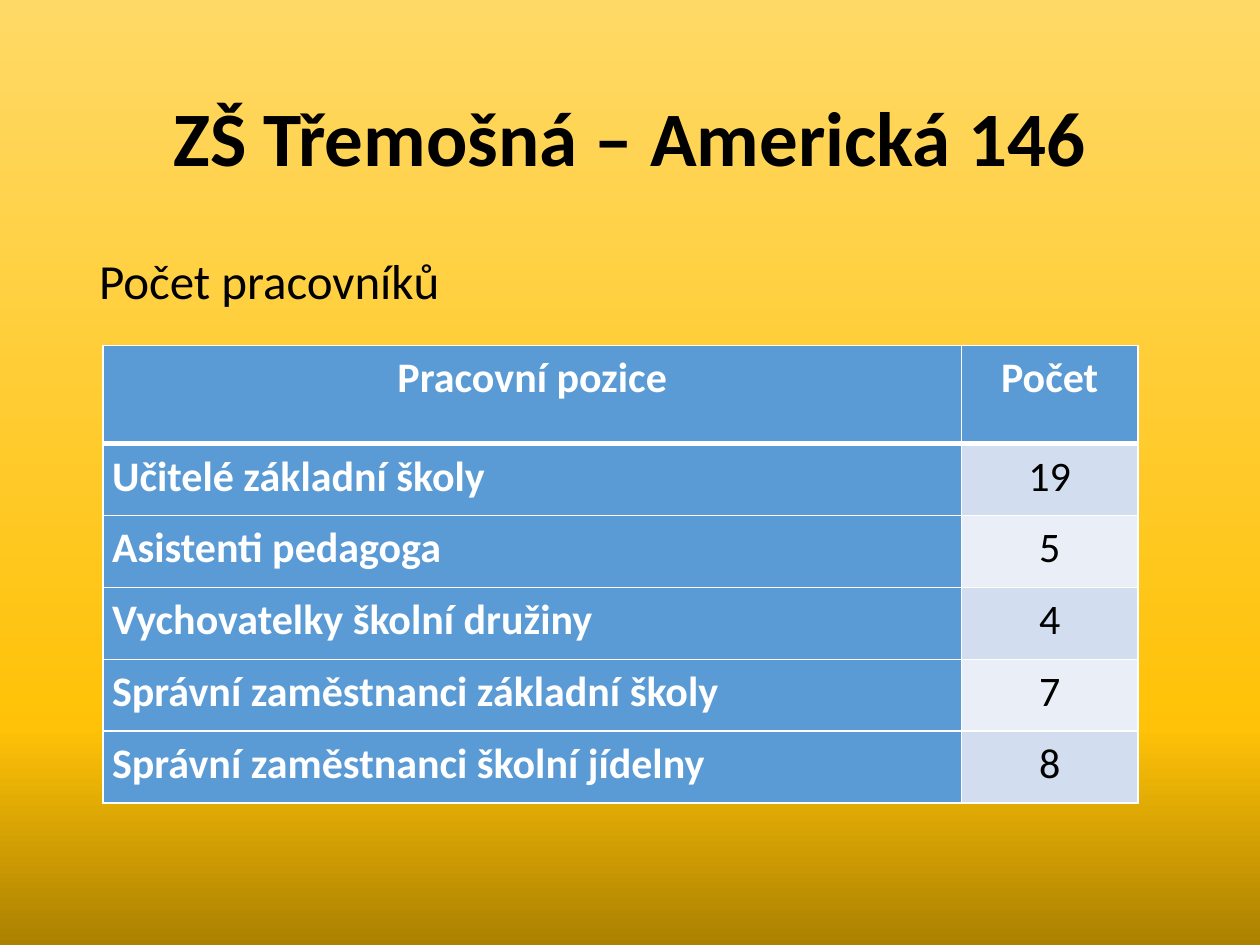
import copy

import pptx
import pptx.dml.color
import pptx.enum.text
import pptx.oxml
import pptx.oxml.ns
import pptx.util
from pptx.util import Cm

RGBColor = pptx.dml.color.RGBColor
ALIGN = pptx.enum.text.PP_ALIGN
ANCHOR = pptx.enum.text.MSO_ANCHOR

BLACK = RGBColor(0x00, 0x00, 0x00)
WHITE = RGBColor(0xFF, 0xFF, 0xFF)
BLUE = RGBColor(0x5B, 0x9B, 0xD5)
BANDS = (RGBColor(0xD2, 0xDE, 0xEF), RGBColor(0xEA, 0xEF, 0xF7))
BACKGROUND_STOPS = (
    (0, RGBColor(0xAB, 0x81, 0x00)),
    (0.23, RGBColor(0xFF, 0xC2, 0x08)),
    (1, RGBColor(0xFF, 0xD9, 0x66)),
)

ROWS = (
    ("Pracovní pozice", "Počet"),
    ("Učitelé základní školy", "19"),
    ("Asistenti pedagoga", "5"),
    ("Vychovatelky školní družiny", "4"),
    ("Správní zaměstnanci základní školy", "7"),
    ("Správní zaměstnanci školní jídelny", "8"),
)


def write_text(frame, text, size=24, color=BLACK, bold=False,
               align=ALIGN.LEFT, spacing=0.9):
    paragraph = frame.paragraphs[0]
    paragraph.alignment = align
    paragraph.line_spacing = spacing
    run = paragraph.add_run()
    run.text = text
    run.font.name = "Calibri"
    run.font.size = pptx.util.Pt(size)
    run.font.bold = bold
    run.font.color.rgb = color


def add_text_box(slide, left, top, width, height, text, anchor=ANCHOR.TOP, **text_format):
    frame = slide.shapes.add_textbox(left, top, width, height).text_frame
    frame.word_wrap = True
    frame.vertical_anchor = anchor
    write_text(frame, text, **text_format)


def paint_background(slide):
    fill = slide.background.fill
    fill.gradient()
    fill.gradient_angle = 90
    # The default gradient has two stops; a third one is needed
    stop_list = slide.element.find(".//" + pptx.oxml.ns.qn("a:gsLst"))
    stop_list.append(copy.deepcopy(stop_list[-1]))
    for stop, (position, color) in zip(fill.gradient_stops, BACKGROUND_STOPS):
        stop.position = position
        stop.color.rgb = color


def set_borders(cell, **widths):
    properties = cell._tc.get_or_add_tcPr()
    for side in "LRTB":
        width = pptx.util.Pt(widths.get(side, 1))
        properties.append(pptx.oxml.parse_xml(
            f'<a:ln{side} {pptx.oxml.ns.nsdecls("a")} w="{width}">'
            f'<a:solidFill><a:srgbClr val="{WHITE}"/></a:solidFill></a:ln{side}>'))


def fill_cell(cell, text, row, column):
    is_label = row == 0 or column == 0
    cell.margin_left = cell.margin_right = Cm(0.18)
    cell.margin_top = cell.margin_bottom = 0
    # The rule under the header row is thicker
    set_borders(cell, T=3 if row == 1 else 1, B=3 if row == 0 else 1)
    cell.fill.solid()
    cell.fill.fore_color.rgb = BLUE if is_label else BANDS[(row - 1) % 2]
    write_text(cell.text_frame, text, bold=is_label, spacing=1.15,
               color=WHITE if is_label else BLACK,
               align=ALIGN.LEFT if row and column == 0 else ALIGN.CENTER)


def add_staff_table(slide):
    table = slide.shapes.add_table(len(ROWS), 2, Cm(2.08), Cm(6.96),
                                   Cm(20.86), Cm(9.23)).table
    for column, width in zip(table.columns, (17.3, 3.56)):
        column.width = Cm(width)
    for row_index, values in enumerate(ROWS):
        table.rows[row_index].height = Cm(1.45 if row_index else 1.98)
        for column_index, text in enumerate(values):
            fill_cell(table.cell(row_index, column_index), text, row_index, column_index)


def main():
    presentation = pptx.Presentation()
    presentation.slide_width = Cm(25.4)
    presentation.slide_height = Cm(19.05)
    slide = presentation.slides.add_slide(presentation.slide_layouts[6])
    paint_background(slide)

    # Heading and lead-in
    add_text_box(slide, Cm(1.75), Cm(1.02), Cm(21.9), Cm(3.68),
                 "ZŠ Třemošná – Americká 146", anchor=ANCHOR.MIDDLE,
                 size=44, bold=True, align=ALIGN.CENTER)
    add_text_box(slide, Cm(1.75), Cm(5.05), Cm(21.9), Cm(12.09),
                 "Počet pracovníků", size=28)

    # Staff numbers by position
    add_staff_table(slide)
    presentation.save("out.pptx")


if __name__ == "__main__":
    main()
